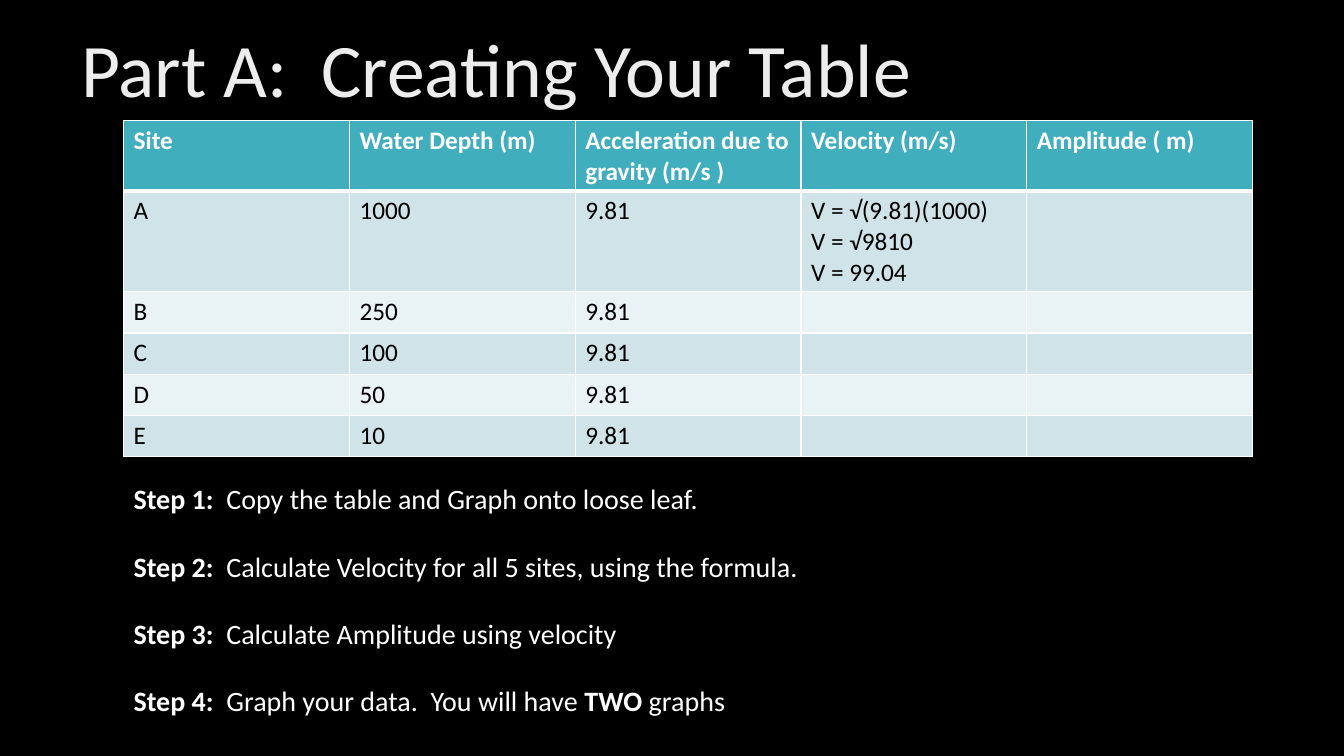
from dataclasses import dataclass

from lxml.etree import SubElement
from pptx import Presentation
from pptx.dml.color import RGBColor
from pptx.enum.text import MSO_ANCHOR
from pptx.oxml.ns import qn
from pptx.util import Inches, Pt


@dataclass(frozen=True)
class Theme:
    """Colours, type sizes and line weights of the slide."""
    font: str = "Calibri"
    back: str = "000000"
    title: str = "EDEDED"
    light: str = "FFFFFF"
    dark: str = "000000"
    head: str = "41AEBD"
    bands: tuple = ("CFE3E8", "E9F2F4")
    big: int = 54
    step: int = 20
    cell: int = 18
    gap: int = 24
    thin: int = 1
    thick: int = 3


THEME = Theme()
WIDE, HIGH = Inches(13.33), Inches(7.5)
HEADS = ["Site", "Water Depth (m)", "Acceleration due to gravity (m/s )",
         "Velocity (m/s)", "Amplitude ( m)"]
DEPTHS = {"A": "1000", "B": "250", "C": "100", "D": "50", "E": "10"}
WORK = {"A": ["V = √(9.81)(1000)", "V = √9810", "V = 99.04"]}
ROWS = [0.7, 1.0] + [0.41] * 4
STEPS = [
    [("Step 1:", True), ("  Copy the table and Graph onto loose leaf.", False)],
    [("Step 2:  ", True),
     ("Calculate Velocity for all 5 sites, using the formula.", False)],
    [("Step 3:", True), ("  Calculate Amplitude using velocity", False)],
    [("Step 4:", True), ("  Graph your data.  You will have ", False),
     ("TWO", True), (" graphs", False)],
]


def area(left, top, width, height):
    """Turn shares of the slide into a box of whole lengths."""
    return (int(left * WIDE), int(top * HIGH),
            int(width * WIDE), int(height * HIGH))


def add_run(para, text, size, color, bold=False):
    """Add one styled run to a paragraph."""
    run = para.add_run()
    run.text = text
    run.font.name = THEME.font
    run.font.size = Pt(size)
    run.font.bold = bold
    run.font.color.rgb = RGBColor.from_string(color)


def next_para(frame, index):
    """Give the first paragraph of a frame, or a new one after it."""
    return frame.add_paragraph() if index else frame.paragraphs[0]


def add_title(slide, box):
    """Place the heading in the middle of its box."""
    frame = slide.shapes.add_textbox(*box).text_frame
    frame.word_wrap = True
    frame.vertical_anchor = MSO_ANCHOR.MIDDLE
    para = frame.paragraphs[0]
    para.line_spacing = 0.9
    add_run(para, "Part A:  Creating Your Table", THEME.big, THEME.title)


def add_edges(cell, widths):
    """Draw the four borders of a cell."""
    props = cell._tc.get_or_add_tcPr()
    for side, width in widths.items():
        line = SubElement(props, qn(f"a:ln{side}"), w=str(Pt(width)))
        fill = SubElement(line, qn("a:solidFill"))
        SubElement(fill, qn("a:srgbClr"), val=THEME.light)


def fill_cell(cell, lines, row):
    """Write and colour a cell according to its row."""
    top = THEME.thick if row == 1 else THEME.thin
    low = THEME.thick if row == 0 else THEME.thin
    add_edges(cell, {"L": THEME.thin, "R": THEME.thin, "T": top, "B": low})
    back = THEME.bands[(row - 1) % 2] if row else THEME.head
    cell.fill.solid()
    cell.fill.fore_color.rgb = RGBColor.from_string(back)
    color = THEME.dark if row else THEME.light
    for index, text in enumerate(lines):
        add_run(next_para(cell.text_frame, index), text, THEME.cell,
                color, row == 0)


def add_data(slide, box):
    """Place the table of sites in its box."""
    data = [[[head] for head in HEADS]]
    data += [[[site], [depth], ["9.81"], WORK.get(site, []), []]
             for site, depth in DEPTHS.items()]
    table = slide.shapes.add_table(len(data), len(HEADS), *box).table
    table.horz_banding = False
    for col in table.columns:
        col.width = box[2] // len(HEADS)
    for row, cells in enumerate(data):
        table.rows[row].height = int(box[3] * ROWS[row] / sum(ROWS))
        for col, lines in enumerate(cells):
            fill_cell(table.cell(row, col), lines, row)


def add_steps(slide, box):
    """Place the list of steps in its box."""
    frame = slide.shapes.add_textbox(*box).text_frame
    frame.word_wrap = True
    for index, parts in enumerate(STEPS):
        para = next_para(frame, index)
        if index:
            para.space_before = Pt(THEME.gap)
        for text, bold in parts:
            add_run(para, text, THEME.step, THEME.light, bold)


def main():
    """Build the slide and save it."""
    deck = Presentation()
    deck.slide_width, deck.slide_height = WIDE, HIGH
    slide = deck.slides.add_slide(deck.slide_layouts[6])
    slide.background.fill.solid()
    slide.background.fill.fore_color.rgb = RGBColor.from_string(THEME.back)
    add_title(slide, area(0.053, 0, 0.863, 0.193))
    add_data(slide, area(0.092, 0.159, 0.84, 0.445))
    add_steps(slide, area(0.092, 0.631, 0.517, 0.328))
    deck.save("out.pptx")


if __name__ == "__main__":
    main()
